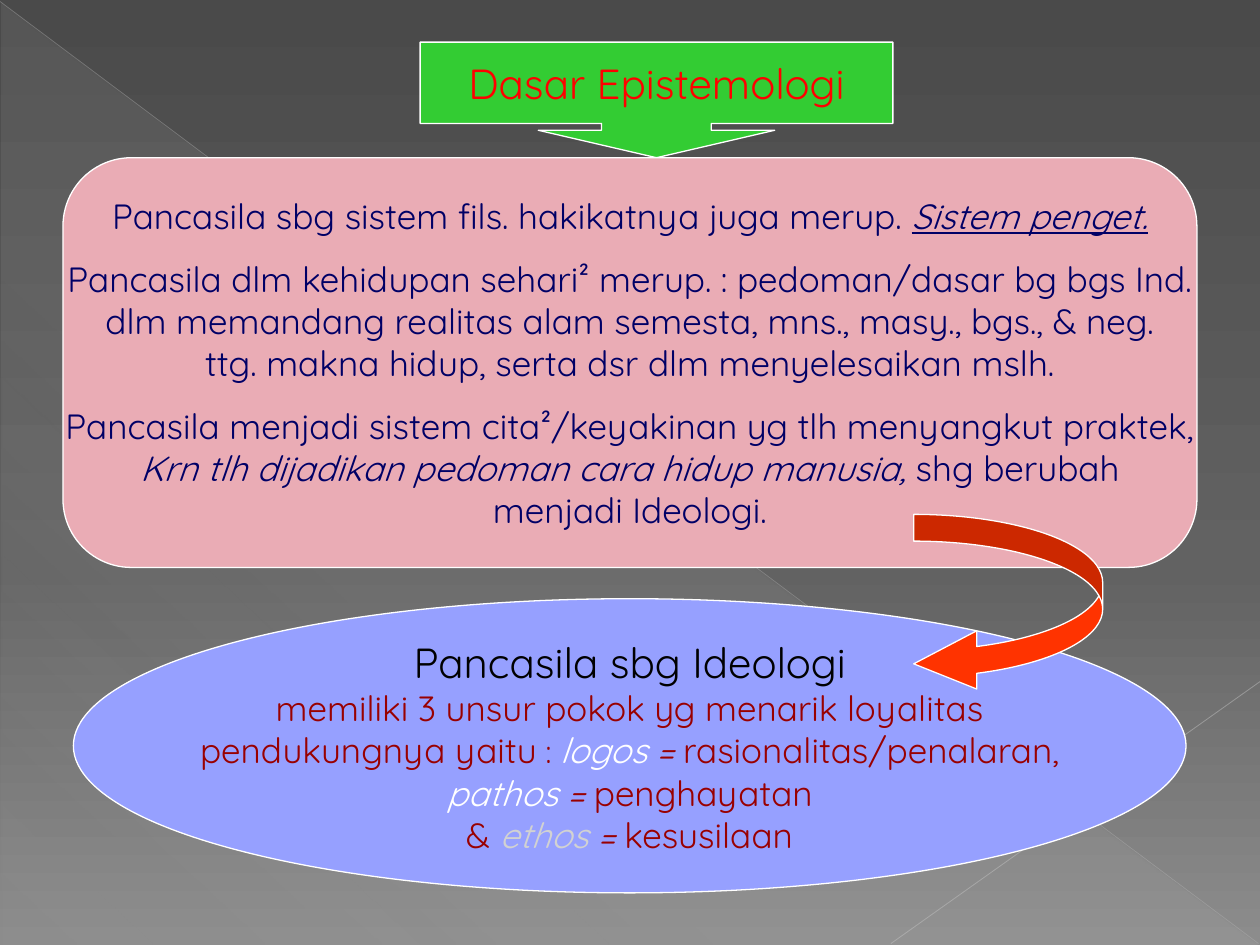
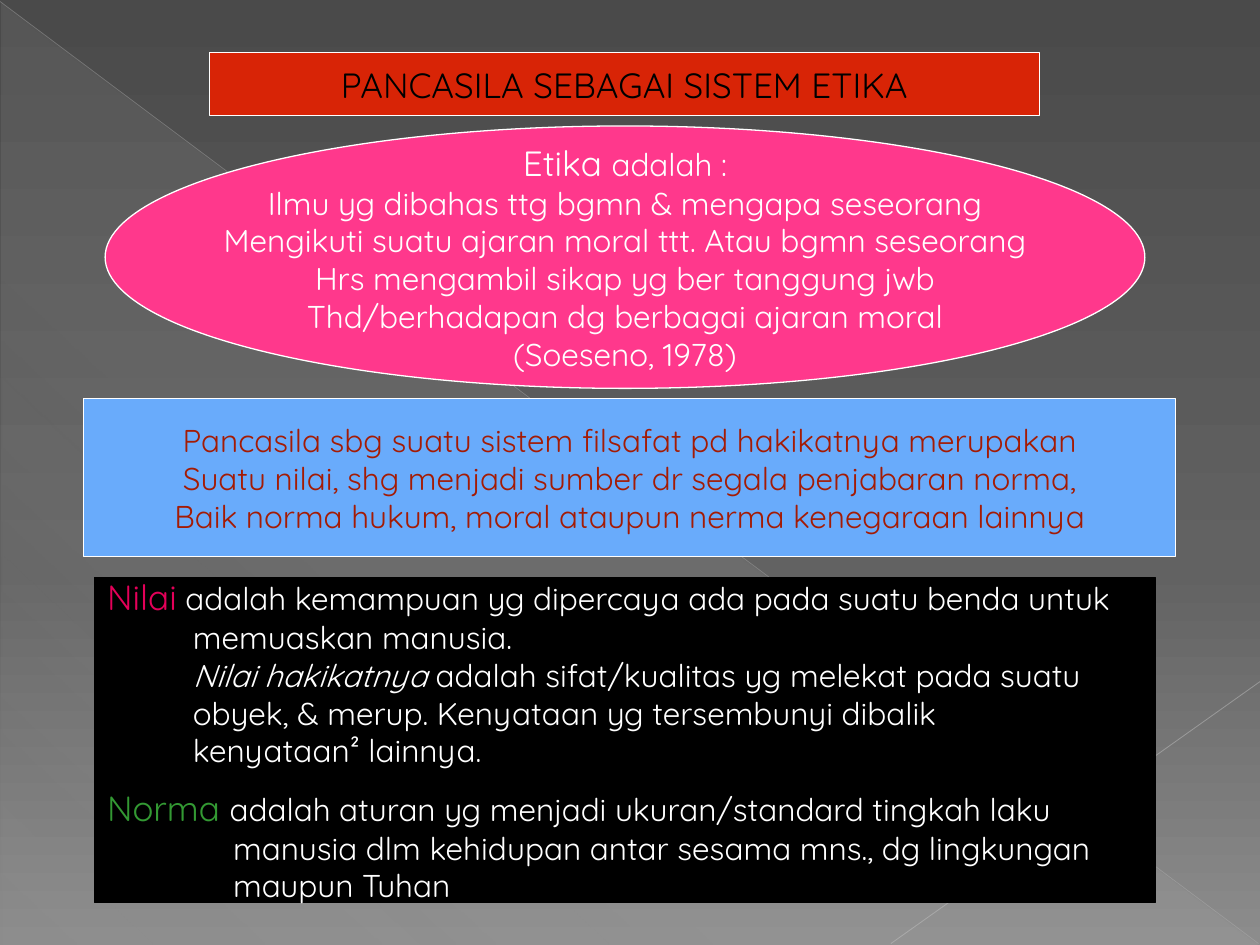
from dataclasses import dataclass
from typing import Optional

from lxml import etree
from pptx import Presentation
from pptx import util as u
from pptx.dml.color import RGBColor
from pptx.enum import shapes, text
from pptx.oxml.ns import qn

Cm, Pt = u.Cm, u.Pt
MSO = shapes.MSO_SHAPE


@dataclass(frozen=True)
class Theme:
    font: str = "Quicksand"
    heading: int = 24
    body: int = 20
    small: int = 18
    outline: float = 0.75
    white: str = "FFFFFF"
    black: str = "000000"
    silver: str = "D2D2D2"
    red: str = "FF0000"
    navy: str = "000066"
    maroon: str = "990000"
    brick: str = "A41B04"
    crimson: str = "E40059"
    leaf: str = "339933"
    green: str = "33CC33"
    rose: str = "EAACB5"
    periwinkle: str = "96A0FF"
    orange: str = "FF3300"
    banner: str = "D82406"
    pink: str = "FF388C"
    sky: str = "69ABFB"


T = Theme()


@dataclass(frozen=True)
class Run:
    text: str
    color: Optional[str] = None
    size: Optional[int] = None
    italic: bool = False
    underline: bool = False


@dataclass(frozen=True)
class Para:
    runs: tuple[Run, ...]
    size: int
    color: str
    before: float = 0
    indent: float = 0


@dataclass(frozen=True)
class Box:
    kind: int
    at: tuple[float, float, float, float]
    fill: str
    paras: tuple[Para, ...] = ()
    adj: tuple[float, ...] = ()
    line: str = T.white
    align: int = text.PP_ALIGN.CENTER
    wrap: bool = False


@dataclass(frozen=True)
class Ray:
    start: tuple[float, float]
    end: tuple[float, float]
    color: str
    width: float
    opacity: int


def para(*parts: str | Run, size: int = T.body, color: str = T.navy,
         before: float = 0, indent: float = 0) -> Para:
    runs = tuple(Run(x) if isinstance(x, str) else x for x in parts)
    return Para(runs, size, color, before, indent)


# Backdrop shared by the slides: stops are (position, colour, opacity) in percent
SKY_STOPS = ((0, "4A4A4A", 100), (60, "626262", 100), (100, "8C8C8C", 100))
VEIL_STOPS = ((0, T.silver, 10), (70, T.silver, 8), (100, T.silver, 1))
RAYS = (
    Ray((0, 0.03), (25.37, 19.02), "BFBFBF", 0.39, 35),
    Ray((25.4, 13.74), (17.96, 19.02), "C6C6C6", 0.47, 45),
)


def set_alpha(clr, opacity: int) -> None:
    etree.SubElement(clr, qn("a:alpha"), val=str(opacity * 1000))


def set_gradient(owner, fill, stops: tuple, angle: int) -> None:
    fill.gradient()
    grad = next(owner.element.iter(qn("a:gradFill")))
    gs_list = grad.find(qn("a:gsLst"))
    for gs in list(gs_list):
        gs_list.remove(gs)
    for pos, color, opacity in stops:
        gs = etree.SubElement(gs_list, qn("a:gs"), pos=str(pos * 1000))
        set_alpha(etree.SubElement(gs, qn("a:srgbClr"), val=color), opacity)
    grad.find(qn("a:lin")).set("ang", str(angle * 60000))


def add_plain_shape(s, kind: int, at: tuple[float, float, float, float]):
    sp = s.shapes.add_shape(kind, *(Cm(v) for v in at))
    sp.shadow.inherit = False
    sp.element.remove(sp.element.find(qn("p:style")))
    return sp


def add_ray(s, ray: Ray) -> None:
    ends = (Cm(v) for v in ray.start + ray.end)
    cx = s.shapes.add_connector(shapes.MSO_CONNECTOR.STRAIGHT, *ends)
    cx.line.color.rgb = RGBColor.from_string(ray.color)
    cx.line.width = Pt(ray.width)
    set_alpha(next(cx.element.iter(qn("a:srgbClr"))), ray.opacity)
    etree.SubElement(cx.element.spPr, qn("a:effectLst"))


def add_backdrop(s) -> None:
    set_gradient(s, s.background.fill, SKY_STOPS, 90)
    veil = add_plain_shape(s, MSO.RIGHT_TRIANGLE, (0.03, 0.05, 25.35, 19))
    set_gradient(veil, veil.fill, VEIL_STOPS, 133)
    veil.line.fill.background()
    for ray in RAYS:
        add_ray(s, ray)


def write_para(p, item: Para, align: int) -> None:
    p.alignment = align
    p.space_before = Pt(item.before)
    p.font.name = T.font
    p.font.size = Pt(item.size)
    p.font.color.rgb = RGBColor.from_string(item.color)
    if item.indent:
        p._p.get_or_add_pPr().set("marL", str(Cm(item.indent)))
    for run in item.runs:
        r = p.add_run()
        r.text = run.text
        if run.size:
            r.font.size = Pt(run.size)
        if run.color:
            r.font.color.rgb = RGBColor.from_string(run.color)
        if run.italic:
            r.font.italic = True
        if run.underline:
            r.font.underline = True


def add_box(s, box: Box) -> None:
    sp = add_plain_shape(s, box.kind, box.at)
    for i, value in enumerate(box.adj):
        sp.adjustments[i] = value
    sp.fill.solid()
    sp.fill.fore_color.rgb = RGBColor.from_string(box.fill)
    sp.line.color.rgb = RGBColor.from_string(box.line)
    sp.line.width = Pt(T.outline)
    tf = sp.text_frame
    tf.word_wrap = box.wrap
    tf.vertical_anchor = text.MSO_ANCHOR.MIDDLE
    for i, item in enumerate(box.paras):
        write_para(tf.add_paragraph() if i else tf.paragraphs[0], item, box.align)


def unsur(word: str, color: str) -> tuple[Run, Run]:
    return Run(word, color, italic=True), Run(" =", italic=True)


def plain(*lines: str, size: int, color: str) -> tuple[Para, ...]:
    return tuple(para(line, size=size, color=color) for line in lines)


# Slide 1: epistemology
EPISTEMOLOGI = (
    Box(MSO.DOWN_ARROW_CALLOUT, (8.47, 0.85, 9.53, 2.33), T.green,
        plain("Dasar Epistemologi", size=T.heading, color=T.red),
        adj=(0.95, 1.023, 0.237, 0.704)),
    Box(MSO.ROUNDED_RECTANGLE, (1.27, 3.18, 22.86, 8.26), T.rose, (
        para("Pancasila sbg sistem fils. hakikatnya juga merup. ",
             Run("Sistem penget.", italic=True, underline=True)),
        para("Pancasila dlm kehidupan sehari² merup. : pedoman/dasar bg bgs Ind.",
             before=12),
        para("dlm memandang realitas alam semesta, mns., masy., bgs., & neg."),
        para("ttg. makna hidup, serta dsr dlm menyelesaikan mslh."),
        para("Pancasila menjadi sistem cita²/keyakinan yg tlh menyangkut praktek,",
             before=12),
        para(Run("Krn tlh dijadikan pedoman cara hidup manusia, ", italic=True),
             "shg berubah"),
        para("menjadi Ideologi."),
    ), adj=(0.167,)),
    Box(MSO.OVAL, (1.48, 12.07, 22.43, 5.93), T.periwinkle, (
        para("Pancasila sbg Ideologi", size=T.heading, color=T.black),
        para("memiliki 3 unsur pokok yg menarik loyalitas", color=T.maroon),
        para("pendukungnya yaitu", Run(" : ", size=T.small),
             *unsur("logos", T.white), " rasionalitas/penalaran,", color=T.maroon),
        para(*unsur("pathos", T.white), " penghayatan", color=T.maroon),
        para("& ", *unsur("ethos", T.silver), " kesusilaan", color=T.maroon),
    )),
    Box(MSO.CURVED_LEFT_ARROW, (18.42, 10.37, 3.81, 3.6), T.orange,
        adj=(0.15, 0.326, 0.353)),
)

# Slide 2: ethics; definitions hang under their first line
NILAI_INDENT, NORMA_INDENT = 1.73, 2.54


def definition(*parts: str | Run, before: float = 0, indent: float = 0) -> Para:
    return para(*parts, size=T.small, color=T.white, before=before, indent=indent)


ETIKA = (
    Box(MSO.RECTANGLE, (4.23, 1.06, 16.72, 1.27), T.banner,
        plain("PANCASILA SEBAGAI SISTEM ETIKA", size=T.body, color=T.black)),
    Box(MSO.OVAL, (2.12, 2.54, 20.96, 5.29), T.pink, (
        definition(Run("Etika ", size=T.body), "adalah :"),
        *plain("Ilmu yg dibahas ttg bgmn & mengapa seseorang",
               "Mengikuti suatu ajaran moral ttt. Atau bgmn seseorang",
               "Hrs mengambil sikap yg ber tanggung jwb",
               "Thd/berhadapan dg berbagai ajaran moral",
               "(Soeseno, 1978)", size=T.small, color=T.white),
    )),
    Box(MSO.RECTANGLE, (1.69, 8.04, 22.01, 3.18), T.sky,
        plain("Pancasila sbg suatu sistem filsafat pd hakikatnya merupakan",
              "Suatu nilai, shg menjadi sumber dr segala penjabaran norma,",
              "Baik norma hukum, moral ataupun nerma kenegaraan lainnya",
              size=T.small, color=T.brick)),
    Box(MSO.RECTANGLE, (1.91, 11.64, 21.38, 6.56), T.black, (
        definition(Run("Nilai", T.crimson, T.body),
                   " adalah kemampuan yg dipercaya ada pada suatu benda untuk"),
        definition("memuaskan manusia.", indent=NILAI_INDENT),
        definition(Run("Nilai hakikatnya ", italic=True),
                   "adalah sifat/kualitas yg melekat pada suatu", indent=NILAI_INDENT),
        definition("obyek, & merup. Kenyataan yg tersembunyi dibalik",
                   indent=NILAI_INDENT),
        definition("kenyataan² lainnya.", indent=NILAI_INDENT),
        definition(Run("Norma ", T.leaf, T.body),
                   "adalah aturan yg menjadi ukuran/standard tingkah laku", before=10),
        definition("manusia dlm kehidupan antar sesama mns., dg lingkungan",
                   indent=NORMA_INDENT),
        definition("maupun Tuhan", indent=NORMA_INDENT),
    ), line=T.black, align=text.PP_ALIGN.LEFT, wrap=True),
)


def main() -> None:
    prs = Presentation()
    prs.slide_width, prs.slide_height = Cm(25.4), Cm(19.05)
    for boxes in (EPISTEMOLOGI, ETIKA):
        s = prs.slides.add_slide(prs.slide_layouts[6])
        add_backdrop(s)
        for box in boxes:
            add_box(s, box)
    prs.save("out.pptx")


if __name__ == "__main__":
    main()
